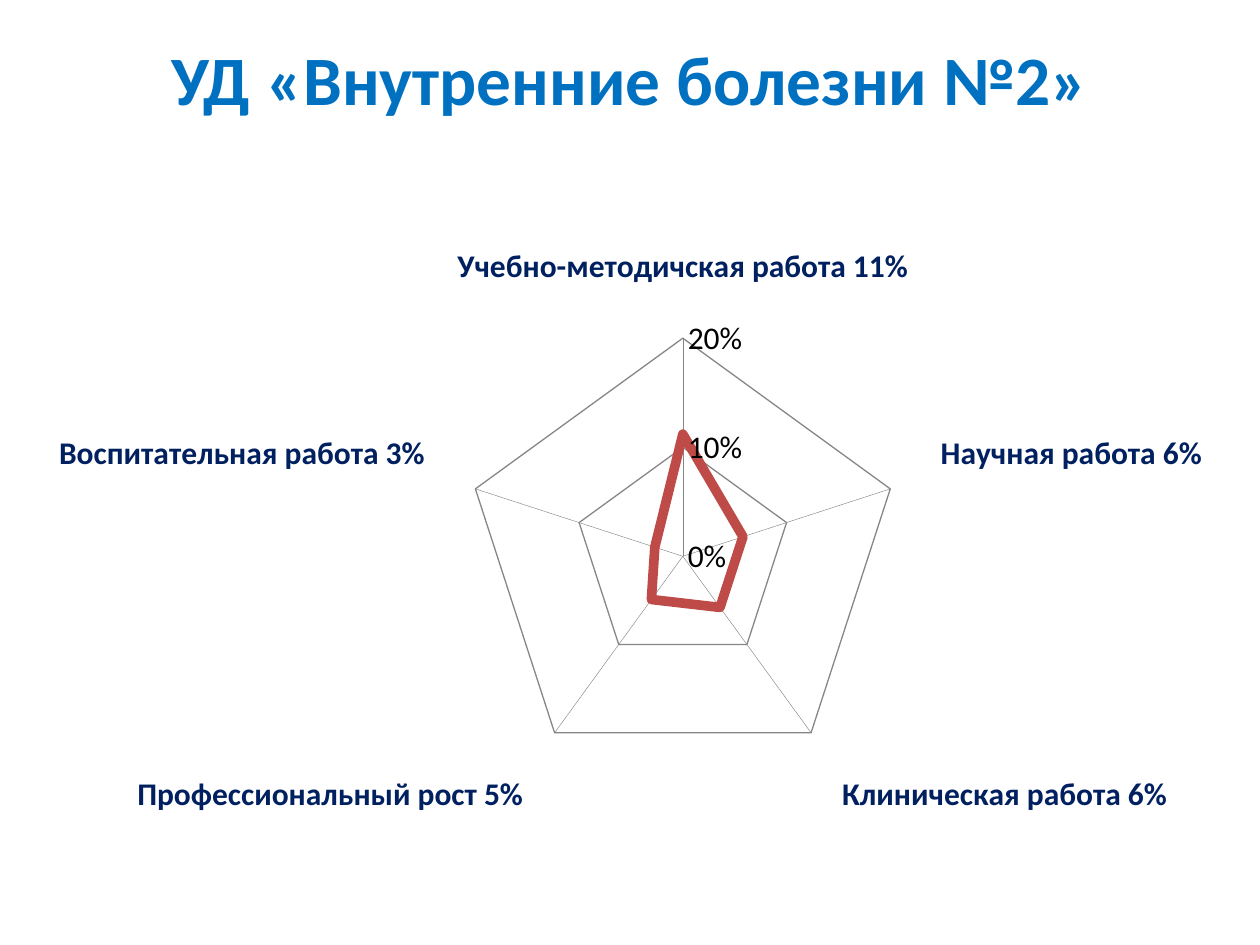
from dataclasses import dataclass

from pptx import Presentation
from pptx.chart.data import CategoryChartData
from pptx.dml.color import RGBColor
from pptx.enum.chart import XL_CHART_TYPE as ChartType, XL_TICK_MARK as Tick
from pptx.enum.text import MSO_ANCHOR as Anchor, PP_ALIGN as Align
from pptx.util import Inches, Pt

FONT = "Calibri"
GRID = "868686"


@dataclass
class Area:
    label: str
    share: float


AREAS = [
    Area("Учебно-методичская работа 11%", 0.112),
    Area("Научная работа 6%", 0.058),
    Area("Клиническая работа 6%", 0.058),
    Area("Профессиональный рост 5%", 0.049),
    Area("Воспитательная работа 3%", 0.027),
]


def rgb(color: str) -> RGBColor:
    return RGBColor.from_string(color)


def set_attrs(obj, **values) -> None:
    for name, value in values.items():
        setattr(obj, name, value)


def set_font(font, size: float, color: str, bold: bool = False) -> None:
    set_attrs(font, name=FONT, size=Pt(size), bold=bold)
    font.color.rgb = rgb(color)


def set_line(line, color: str, width: float) -> None:
    line.color.rgb = rgb(color)
    line.width = Pt(width)


def add_title(s, text: str) -> None:
    tf = s.shapes.add_textbox(Inches(0.5), Inches(0.31), Inches(9), Inches(0.61)).text_frame
    set_attrs(tf, word_wrap=True, vertical_anchor=Anchor.MIDDLE)
    p = tf.paragraphs[0]
    p.alignment = Align.CENTER
    r = p.add_run()
    r.text = text
    set_font(r.font, 39.6, "0070C0", bold=True)


def add_radar(s, areas: list[Area]) -> None:
    data = CategoryChartData(number_format="0%")
    data.categories = [area.label for area in areas]
    data.add_series("Series 1", [area.share for area in areas])
    chart = s.shapes.add_chart(
        ChartType.RADAR, Inches(0.28), Inches(0.92), Inches(9.45), Inches(6.58), data
    ).chart
    set_attrs(chart, has_legend=False, has_title=False)
    set_font(chart.font, 18, "000000")

    for axis, color, bold in (
        (chart.category_axis, "002060", True),
        (chart.value_axis, "000000", False),
    ):
        set_attrs(axis, has_major_gridlines=True, major_tick_mark=Tick.NONE,
                  minor_tick_mark=Tick.NONE)
        set_font(axis.tick_labels.font, 18, color, bold)
        set_line(axis.format.line, GRID, 0.25)
        set_line(axis.major_gridlines.format.line, GRID, 0.75)
    value_axis = chart.value_axis
    set_attrs(value_axis, minimum_scale=0, maximum_scale=0.2, major_unit=0.1)
    set_attrs(value_axis.tick_labels, number_format="0%", number_format_is_linked=False)

    plot = chart.plots[0]
    plot.vary_by_categories = False
    series = plot.series[0]
    series.smooth = False
    set_line(series.format.line, "BE4B48", 5.5)


def main() -> None:
    prs = Presentation()
    set_attrs(prs, slide_width=Inches(10), slide_height=Inches(7.5))
    s = prs.slides.add_slide(prs.slide_layouts[6])
    add_title(s, "УД «Внутренние болезни №2»")
    add_radar(s, AREAS)
    prs.save("out.pptx")


if __name__ == "__main__":
    main()
